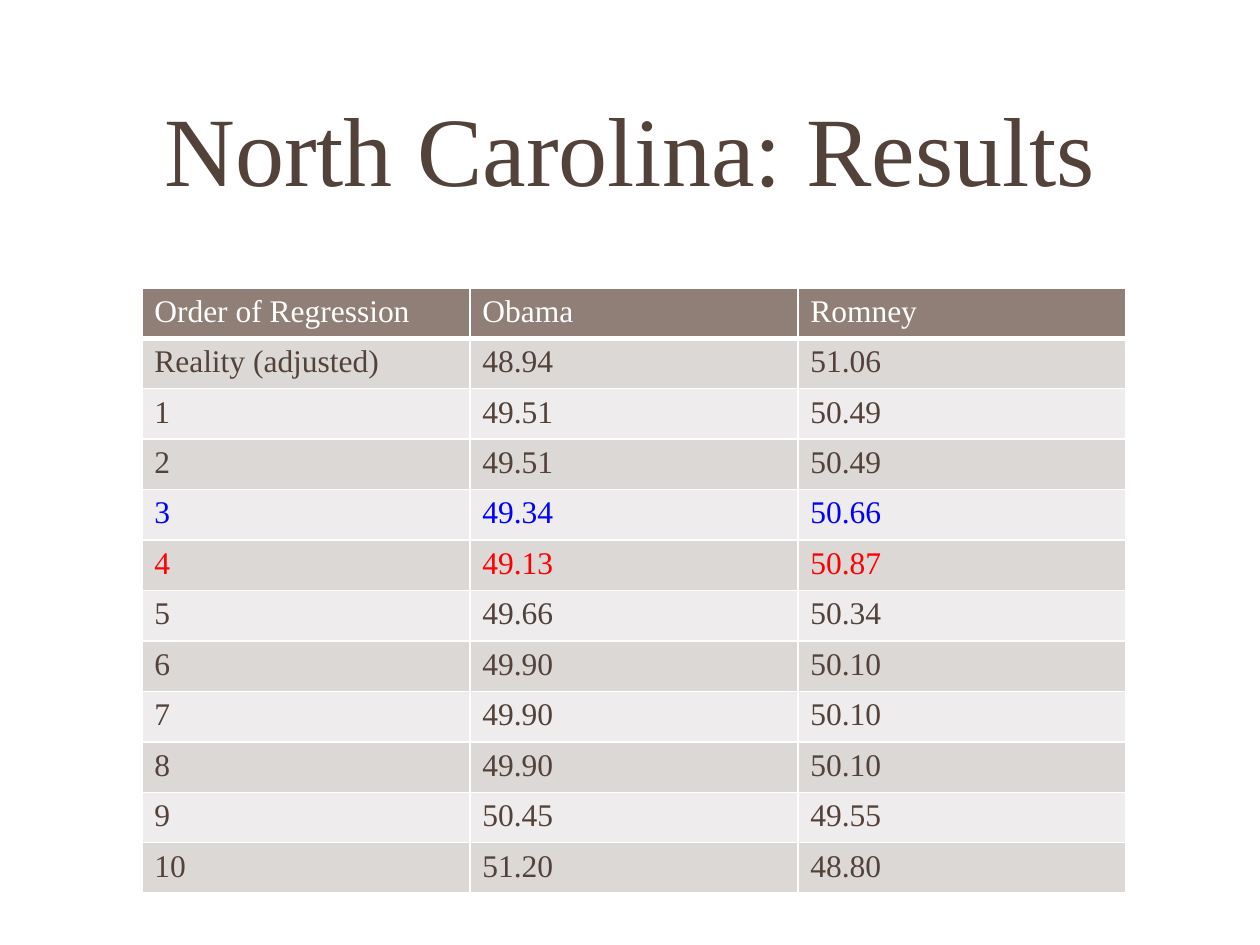
from dataclasses import dataclass

from lxml.etree import SubElement
from pptx import Presentation
from pptx.dml.color import RGBColor
from pptx.enum.text import MSO_ANCHOR, PP_ALIGN
from pptx.oxml.ns import qn
from pptx.util import Inches, Pt

WIDTH, HEIGHT = Inches(10), Inches(7.5)
FONT = "Times New Roman"
COLORS = {
    "text": "534239",
    "white": "FFFFFF",
    "header": "907F76",
    "dark_band": "DBD8D6",
    "light_band": "EEECEC",
    "blue": "0000FF",
    "red": "FF0000",
}


@dataclass
class Row:
    order: str
    obama: str
    romney: str
    color: str = "text"


@dataclass
class Box:
    """Position and size as shares of the slide."""
    left: float
    top: float
    width: float
    height: float

    def emu(self) -> tuple[int, int, int, int]:
        return (int(self.left * WIDTH), int(self.top * HEIGHT),
                int(self.width * WIDTH), int(self.height * HEIGHT))


TITLE_BOX = Box(0.0875, 0.056, 0.825, 0.2)
TABLE_BOX = Box(0.1125, 0.3045, 0.781, 0.628)
ROWS = [
    Row("Order of Regression", "Obama", "Romney", "white"),
    Row("Reality (adjusted)", "48.94", "51.06"),
    Row("1", "49.51", "50.49"),
    Row("2", "49.51", "50.49"),
    Row("3", "49.34", "50.66", "blue"),
    Row("4", "49.13", "50.87", "red"),
    Row("5", "49.66", "50.34"),
    Row("6", "49.90", "50.10"),
    Row("7", "49.90", "50.10"),
    Row("8", "49.90", "50.10"),
    Row("9", "50.45", "49.55"),
    Row("10", "51.20", "48.80"),
]


def style_font(p, size: float, color: str) -> None:
    p.font.name = FONT
    p.font.size = Pt(size)
    p.font.bold = False
    p.font.color.rgb = RGBColor.from_string(COLORS[color])


def add_title(s, text: str) -> None:
    tf = s.shapes.add_textbox(*TITLE_BOX.emu()).text_frame
    tf.word_wrap = True
    tf.vertical_anchor = MSO_ANCHOR.MIDDLE
    p = tf.paragraphs[0]
    p.text = text
    p.alignment = PP_ALIGN.CENTER
    style_font(p, 56, "text")


def set_borders(cell, bottom: float) -> None:
    """Draw white cell borders, 1 pt except at the bottom."""
    props = cell._tc.get_or_add_tcPr()
    for i, (side, width) in enumerate(
            {"lnL": 1, "lnR": 1, "lnT": 1, "lnB": bottom}.items()):
        line = props.makeelement(qn(f"a:{side}"), {"w": str(Pt(width))})
        fill = SubElement(line, qn("a:solidFill"))
        SubElement(fill, qn("a:srgbClr"), val=COLORS["white"])
        props.insert(i, line)


def add_results(s, rows: list[Row]) -> None:
    table = s.shapes.add_table(len(rows), 3, *TABLE_BOX.emu()).table
    for i, row in enumerate(rows):
        band = "header" if i == 0 else "dark_band" if i % 2 else "light_band"
        for j, text in enumerate((row.order, row.obama, row.romney)):
            cell = table.cell(i, j)
            cell.fill.solid()
            cell.fill.fore_color.rgb = RGBColor.from_string(COLORS[band])
            set_borders(cell, bottom=3 if i == 0 else 1)
            p = cell.text_frame.paragraphs[0]
            p.text = text
            style_font(p, 18, row.color)


def main() -> None:
    prs = Presentation()
    prs.slide_width, prs.slide_height = WIDTH, HEIGHT
    s = prs.slides.add_slide(prs.slide_layouts[6])
    add_title(s, "North Carolina: Results")
    add_results(s, ROWS)
    prs.save("out.pptx")


if __name__ == "__main__":
    main()
